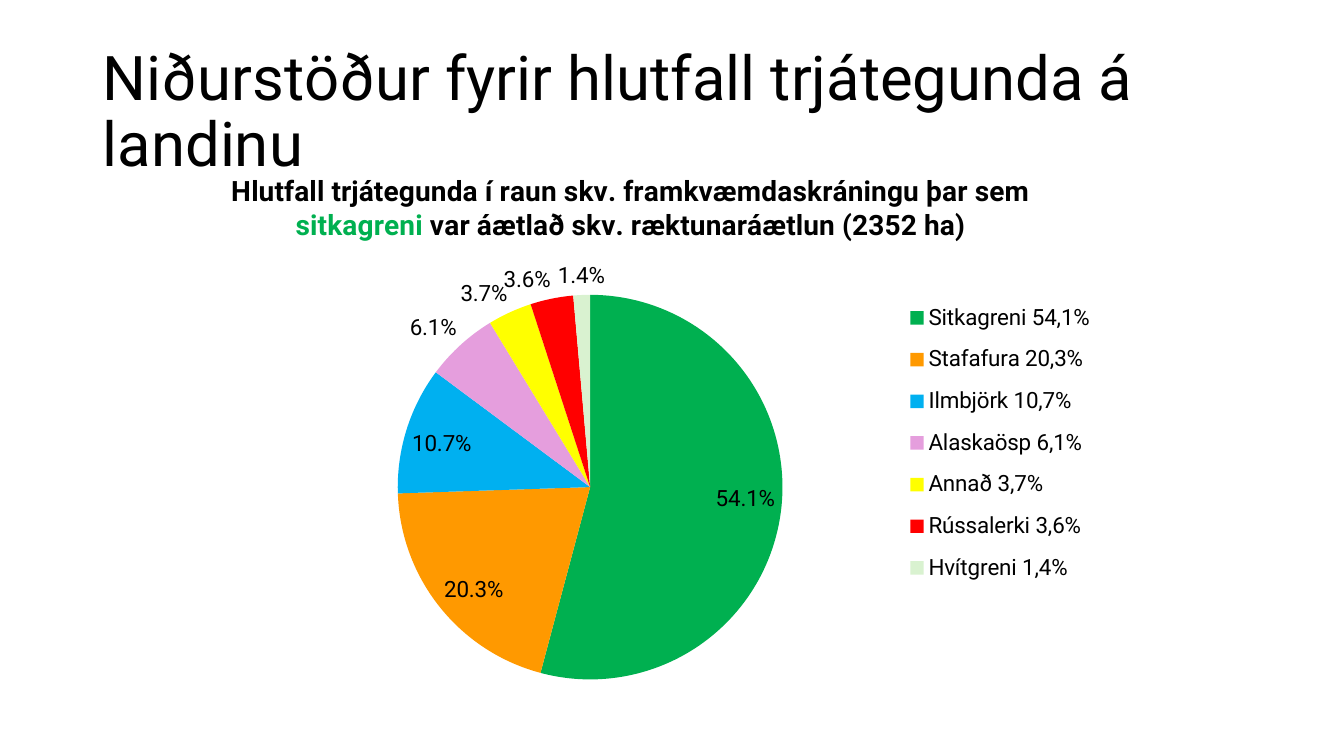
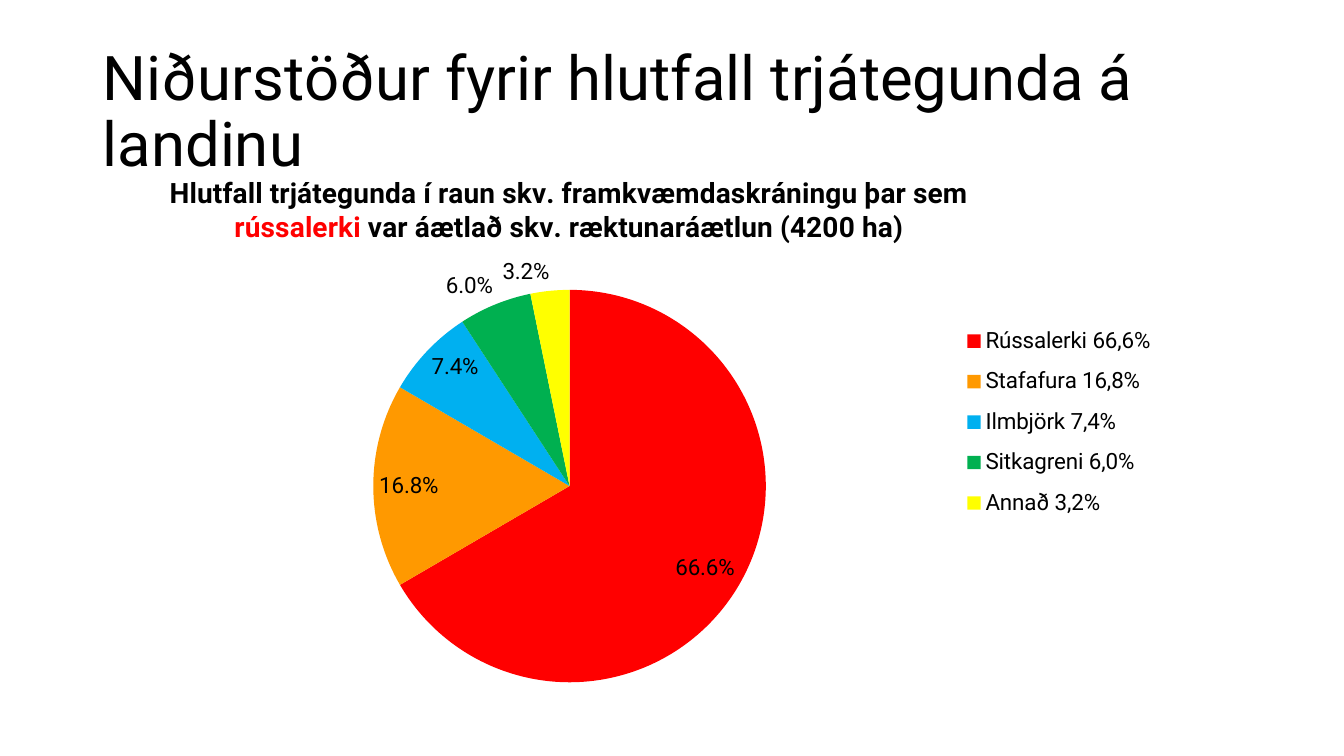
import pptx
import pptx.chart.data
import pptx.dml.color
import pptx.enum.chart
import pptx.enum.text
import pptx.oxml
import pptx.oxml.ns
import pptx.util

RGB = pptx.dml.color.RGBColor
BLACK = RGB(0x00, 0x00, 0x00)
GREEN = RGB(0x00, 0xB0, 0x50)
ORANGE = RGB(0xFF, 0x99, 0x00)
BLUE = RGB(0x00, 0xB0, 0xF0)
PINK = RGB(0xE5, 0x9E, 0xDD)
YELLOW = RGB(0xFF, 0xFF, 0x00)
RED = RGB(0xFF, 0x00, 0x00)
PALE_GREEN = RGB(0xD9, 0xF2, 0xD0)

SPECIES_COLOURS = {
    "Sitkagreni": GREEN, "Stafafura": ORANGE, "Ilmbjörk": BLUE,
    "Alaskaösp": PINK, "Annað": YELLOW, "Rússalerki": RED,
    "Hvítgreni": PALE_GREEN,
}
FONT = "Roboto"
HEADING = "Niðurstöður fyrir hlutfall trjátegunda á landinu"
SMALL_SLICE = 7  # percent; labels of smaller slices stand outside the pie

# Frames are inches; heading, pie and legend places are shares of the frame.
SURVEYS = [
    {
        "planned": "sitkagreni", "hectares": 2352,
        "percent": {"Sitkagreni": 54.1, "Stafafura": 20.3, "Ilmbjörk": 10.7,
                    "Alaskaösp": 6.1, "Annað": 3.7, "Rússalerki": 3.6,
                    "Hvítgreni": 1.4},
        "frame": (0.92, 1.55, 11.29, 5.33),
        "places": {"c:title": (0.119, 0.027),
                   "c:plotArea": (0.268, 0.258, 0.338, 0.716),
                   "c:legend": (0.712, 0.247, 0.17, 0.574)},
    },
    {
        "planned": "rússalerki", "hectares": 4200,
        "percent": {"Rússalerki": 66.6, "Stafafura": 16.8, "Ilmbjörk": 7.4,
                    "Sitkagreni": 6.0, "Annað": 3.2},
        "frame": (0.92, 1.51, 11.26, 5.40),
        "places": {"c:title": (0.065, 0.037),
                   "c:plotArea": (0.247, 0.253, 0.346, 0.721),
                   "c:legend": (0.766, 0.296, 0.17, 0.40)},
    },
]


def style(font, size, colour=BLACK, bold=False):
    font.name = FONT
    font.size = pptx.util.Pt(size)
    font.color.rgb = colour
    font.bold = bold


def place(chart, tag, shares):
    """Fix a chart part at left, top and, if given, width, height."""
    part = chart.element.find(".//" + pptx.oxml.ns.qn(tag))
    for automatic in part.findall(pptx.oxml.ns.qn("c:layout")):
        part.remove(automatic)
    target = '<c:layoutTarget val="inner"/>' if tag == "c:plotArea" else ""
    modes = '<c:xMode val="edge"/><c:yMode val="edge"/>'
    sizes = "".join(f'<c:{side} val="{share}"/>' for side, share in zip("xywh", shares))
    layout = pptx.oxml.parse_xml(
        f'<c:layout {pptx.oxml.ns.nsdecls("c")}><c:manualLayout>'
        f"{target}{modes}{sizes}</c:manualLayout></c:layout>")
    part.insert(0 if tag == "c:plotArea" else 1, layout)


deck = pptx.Presentation()
deck.slide_width = pptx.util.Inches(13.33)
deck.slide_height = pptx.util.Inches(7.5)
title_only = deck.slide_layouts[5]
Position = pptx.enum.chart.XL_LABEL_POSITION

for survey in SURVEYS:
    slide = deck.slides.add_slide(title_only)

    title = slide.shapes.title
    title.left, title.top, title.width, title.height = map(
        pptx.util.Inches, (0.92, 0.4, 11.5, 1.45))
    title.text_frame.auto_size = pptx.enum.text.MSO_AUTO_SIZE.NONE
    title.text_frame.vertical_anchor = pptx.enum.text.MSO_ANCHOR.MIDDLE
    heading = title.text_frame.paragraphs[0]
    heading.alignment = pptx.enum.text.PP_ALIGN.LEFT
    heading.line_spacing = 0.9
    heading_run = heading.add_run()
    heading_run.text = HEADING
    style(heading_run.font, 44)

    shares = pptx.chart.data.CategoryChartData(number_format="0.0%")
    shares.categories = [f"{species} {percent:.1f}%".replace(".", ",")
                         for species, percent in survey["percent"].items()]
    shares.add_series("Series 1", [round(percent / 100, 3)
                                   for percent in survey["percent"].values()])
    chart = slide.shapes.add_chart(
        pptx.enum.chart.XL_CHART_TYPE.PIE,
        *map(pptx.util.Inches, survey["frame"]), shares).chart
    style(chart.font, 10)

    caption = chart.chart_title.text_frame.paragraphs[0]
    planned_colour = SPECIES_COLOURS[survey["planned"].capitalize()]
    for text, colour in (
        ("Hlutfall trjátegunda í raun skv. framkvæmdaskráningu þar sem ", BLACK),
        (survey["planned"], planned_colour),
        (f" var áætlað skv. ræktunaráætlun ({survey['hectares']} ha)", BLACK),
    ):
        caption_run = caption.add_run()
        caption_run.text = text
        style(caption_run.font, 20, colour, bold=True)

    chart.has_legend = True
    chart.legend.position = pptx.enum.chart.XL_LEGEND_POSITION.RIGHT
    chart.legend.include_in_layout = False
    style(chart.legend.font, 16)

    pie = chart.plots[0]
    pie.vary_by_categories = True
    slices = pie.series[0]
    labels = slices.data_labels
    labels.show_value = True
    labels.show_percentage = False
    labels.number_format = "0.0%"
    labels.number_format_is_linked = False
    labels.position = Position.INSIDE_END
    style(labels.font, 16)
    for index, (species, percent) in enumerate(survey["percent"].items()):
        point = slices.points[index]
        point.format.fill.solid()
        point.format.fill.fore_color.rgb = SPECIES_COLOURS[species]
        if percent < SMALL_SLICE:
            style(point.data_label.font, 16)
            point.data_label.position = Position.OUTSIDE_END

    for tag, part_shares in survey["places"].items():
        place(chart, tag, part_shares)

deck.save("out.pptx")
